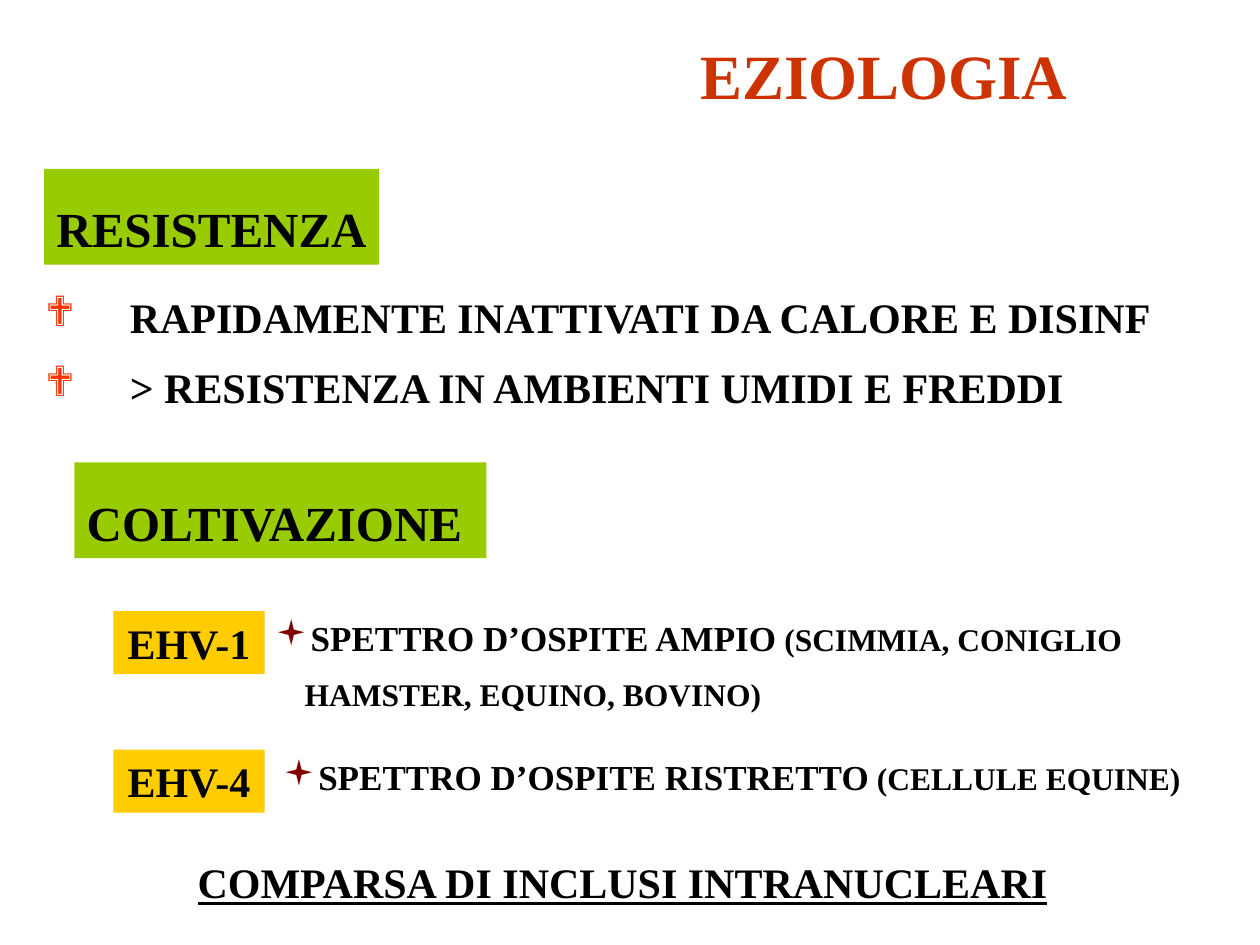
from dataclasses import dataclass
from typing import Optional
from lxml.etree import SubElement
from pptx import Presentation
from pptx.dml.color import RGBColor
from pptx.enum.shapes import MSO_SHAPE
from pptx.enum.text import MSO_ANCHOR, MSO_AUTO_SIZE, PP_ALIGN
from pptx.oxml.ns import qn
from pptx.util import Inches, Pt


@dataclass(frozen=True)
class Theme:
    font: str = "Times New Roman"
    ink: str = "000000"
    title: str = "CC3300"
    shade: str = "EAEAEA"
    head: str = "99CC00"
    tag: str = "FFCC00"
    gem: str = "FF3300"
    dot: str = "800000"
    big: int = 36
    large: int = 28
    mid: int = 24
    base: int = 20
    small: int = 18


@dataclass(frozen=True)
class Bullet:
    mark: str
    color: str
    indent: float


@dataclass(frozen=True)
class Block:
    lines: tuple
    box: tuple
    size: int
    color: str = "000000"
    space: float = 1.4
    center: bool = False
    under: bool = False
    fill: Optional[str] = None
    bullet: Optional[Bullet] = None


LOOK = Theme()
GEM = Bullet("❖", LOOK.gem, 0.67)
DOT = Bullet("▪", LOOK.dot, 0.23)

TITLE = Block(("EZIOLOGIA",), (4.07, 0.21, 5.89, 0.73), LOOK.big, LOOK.title, 1.05, True)
BODY = Block(
    ("RAPIDAMENTE INATTIVATI DA CALORE E DISINF", "> RESISTENZA IN AMBIENTI UMIDI E FREDDI"),
    (0.26, 2.1, 9.09, 1.22), LOOK.mid, bullet=GEM,
)
HEADS = (("RESISTENZA", 0.35, 1.34, 2.66), ("COLTIVAZIONE", 0.59, 3.67, 3.27))
TAGS = (("EHV-1", 4.85), ("EHV-4", 5.95))
HOSTS = (
    ("SPETTRO D’OSPITE AMPIO", " (SCIMMIA, CONIGLIO HAMSTER, EQUINO, BOVINO)", 2.09, 4.69, 1.02),
    ("SPETTRO D’OSPITE RISTRETTO", " (CELLULE EQUINE)", 2.15, 5.8, 0.58),
)
CLOSE = Block(("COMPARSA DI INCLUSI INTRANUCLEARI",), (1.47, 6.59, 7, 0.66), LOOK.mid, under=True)


def place(shape, box: tuple) -> None:
    shape.left, shape.top, shape.width, shape.height = map(Inches, box)


def style(run, size: int, color: str, under: bool = False) -> None:
    font = run.font
    font.name, font.size, font.bold = LOOK.font, Pt(size), True
    font.color.rgb = RGBColor.from_string(color)
    if under:
        font.underline = True


def mark(para, bullet: Bullet) -> None:
    props = para._p.get_or_add_pPr()
    props.set("marL", str(Inches(bullet.indent)))
    props.set("indent", str(-Inches(bullet.indent)))
    tint = SubElement(props, qn("a:buClr"))
    SubElement(tint, qn("a:srgbClr"), val=bullet.color)
    SubElement(props, qn("a:buFont"), typeface="Wingdings")
    SubElement(props, qn("a:buChar"), char=bullet.mark)


def shade(run) -> None:
    props = run._r.get_or_add_rPr()
    group = props.makeelement(qn("a:effectLst"), {})
    props.find(qn("a:solidFill")).addnext(group)
    cast = SubElement(group, qn("a:outerShdw"), dist=str(Pt(3)), dir="2700000")
    SubElement(cast, qn("a:srgbClr"), val=LOOK.shade)


def write(shape, block: Block) -> None:
    frame = shape.text_frame
    frame.word_wrap = True
    frame.auto_size = MSO_AUTO_SIZE.NONE
    frame.vertical_anchor = MSO_ANCHOR.TOP
    frame.margin_right = Inches(0.1 if block.center else 0)
    frame.text = "\n".join(block.lines)
    for para in frame.paragraphs:
        para.alignment = PP_ALIGN.CENTER if block.center else PP_ALIGN.LEFT
        para.line_spacing = block.space
        para.space_before = Pt(0)
        if block.bullet:
            mark(para, block.bullet)
        for run in para.runs:
            style(run, block.size, block.color, block.under)


def draw(slide, block: Block):
    box = tuple(map(Inches, block.box))
    if block.fill:
        shape = slide.shapes.add_shape(MSO_SHAPE.RECTANGLE, *box)
        shape.shadow.inherit = False
        shape.fill.solid()
        shape.fill.fore_color.rgb = RGBColor.from_string(block.fill)
        shape.line.fill.background()
    else:
        shape = slide.shapes.add_textbox(*box)
    write(shape, block)
    return shape


def main() -> None:
    deck = Presentation()
    deck.slide_width, deck.slide_height = Inches(10), Inches(7.5)
    slide = deck.slides.add_slide(deck.slide_layouts[1])
    title, body = slide.shapes.title, slide.placeholders[1]
    for shape, block in ((title, TITLE), (body, BODY)):
        place(shape, block.box)
        write(shape, block)
    shade(title.text_frame.paragraphs[0].runs[0])

    for text, left, top, width in HEADS:
        draw(slide, Block((text,), (left, top, width, 0.76), LOOK.large, fill=LOOK.head))
    for text, top in TAGS:
        draw(slide, Block((text,), (0.9, top, 1.2, 0.5), LOOK.mid, space=1.0,
                          center=True, fill=LOOK.tag))
    for text, note, left, top, height in HOSTS:
        shape = draw(slide, Block((text,), (left, top, 7.73, height), LOOK.base,
                                  space=1.45, bullet=DOT))
        run = shape.text_frame.paragraphs[0].add_run()
        run.text = note
        style(run, LOOK.small, LOOK.ink)
    draw(slide, CLOSE)
    deck.save("out.pptx")


if __name__ == "__main__":
    main()
